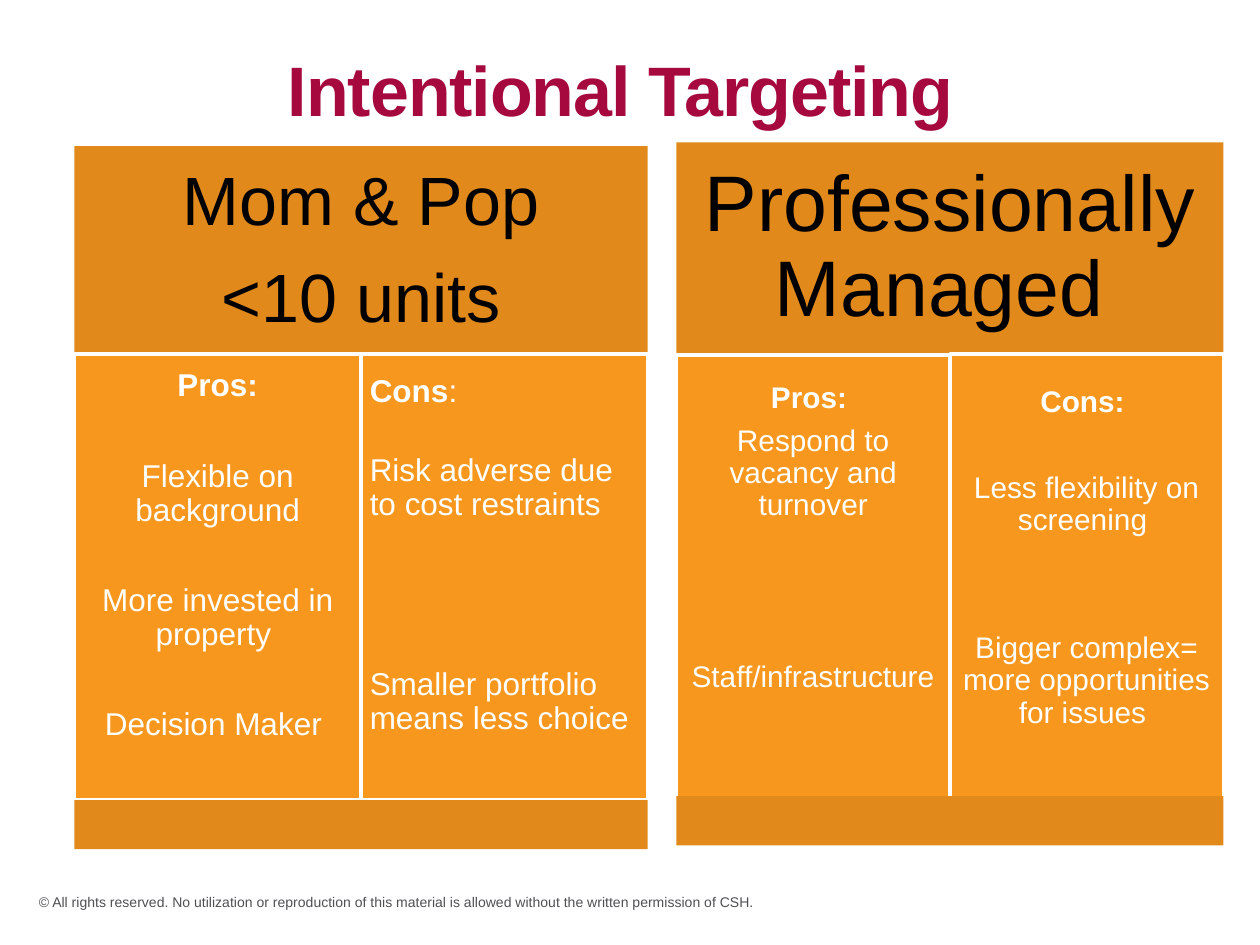
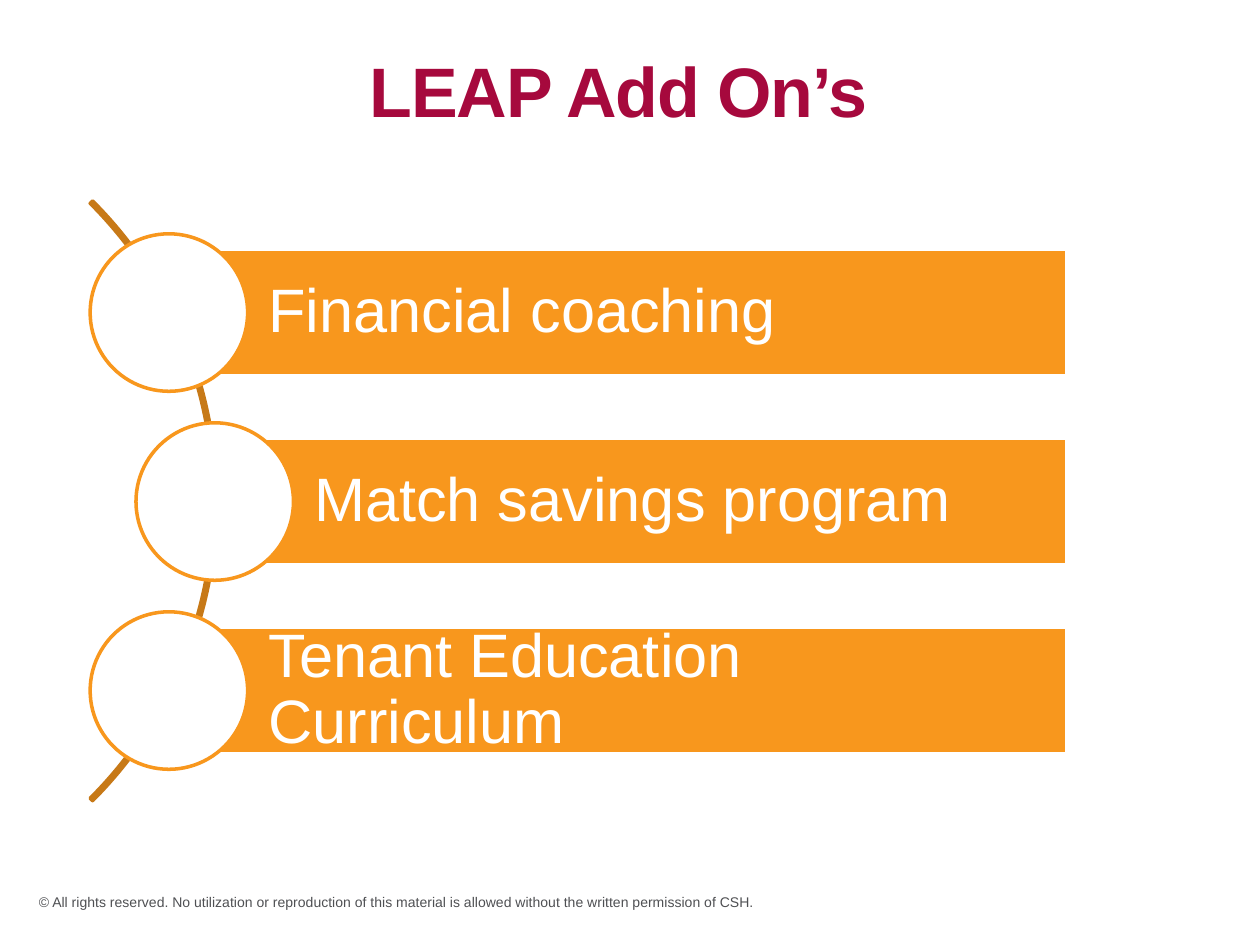
from dataclasses import dataclass

from pptx import Presentation
from pptx.dml.color import RGBColor
from pptx.enum import shapes, text
from pptx.util import Pt


@dataclass(frozen=True)
class Theme:
    font: str = "Arial"
    crimson: str = "A6093D"
    orange: str = "F8971D"
    dark_orange: str = "E1891A"
    arc_brown: str = "C77917"
    white: str = "FFFFFF"
    black: str = "000000"
    grey: str = "4F5053"
    title_size: float = 40
    footer_size: float = 8
    bar_size: float = 35
    line_width: float = 2
    line_spacing: float = 0.9


theme = Theme()
FOOTER = ("© All rights reserved. No utilization or reproduction of this material "
          "is allowed without the written permission of CSH.")
CENTER, LEFT = text.PP_ALIGN.CENTER, text.PP_ALIGN.LEFT
MIDDLE, TOP = text.MSO_ANCHOR.MIDDLE, text.MSO_ANCHOR.TOP


def add_shape(slide, kind, bounds, fill=None, line=None):
    shape = slide.shapes.add_shape(kind, *map(Pt, bounds))
    shape.shadow.inherit = False
    if fill:
        shape.fill.solid()
        shape.fill.fore_color.rgb = RGBColor.from_string(fill)
    else:
        shape.fill.background()
    if line:
        shape.line.color.rgb = RGBColor.from_string(line)
        shape.line.width = Pt(theme.line_width)
    else:
        shape.line.fill.background()
    return shape


def write(shape, lines, size, color, align=LEFT, anchor=MIDDLE,
          margins=(7.2, 3.6, 7.2, 3.6), spacing=theme.line_spacing):
    """Fill a shape with (text, space before) lines; margins run left, top, right, bottom."""
    frame = shape.text_frame
    frame.word_wrap = True
    frame.vertical_anchor = anchor
    (frame.margin_left, frame.margin_top,
     frame.margin_right, frame.margin_bottom) = map(Pt, margins)
    frame.text = "\n".join(line for line, _ in lines)
    for paragraph, (_, space_before) in zip(frame.paragraphs, lines):
        paragraph.alignment = align
        paragraph.line_spacing = spacing
        paragraph.space_before = Pt(space_before)
        for run in paragraph.runs:
            run.font.name = theme.font
            run.font.size = Pt(size)
            run.font.color.rgb = RGBColor.from_string(color)
    return frame


presentation = Presentation()
presentation.slide_width, presentation.slide_height = Pt(720), Pt(540)

# Title and footer on every slide
slides = []
for title, left, top in [("Intentional Targeting ", 73.4, 25.9),
                         ("LEAP Add On’s ", 72, 26.6)]:
    slide = presentation.slides.add_slide(presentation.slide_layouts[6])
    footer = slide.shapes.add_textbox(Pt(15.1), Pt(501.1), Pt(585.4), Pt(28.8))
    write(footer, [(FOOTER, 0)], theme.footer_size, theme.grey, spacing=1.0)
    title_box = slide.shapes.add_textbox(Pt(left), Pt(top), Pt(573.1), Pt(55.4))
    frame = write(title_box, [(title, 0)], theme.title_size, theme.crimson, CENTER)
    title_font = frame.paragraphs[0].runs[0].font
    title_font.bold = True
    title_font._element.set("spc", "-60")
    slides.append(slide)
targeting_slide, add_ons_slide = slides

# Landlord types: header, pros, cons and base band
rectangle = shapes.MSO_SHAPE.RECTANGLE
landlords = [
    dict(left=42.5, width=327.6, header_top=83.5, base_top=457.2, margin=11.5,
         header=[("Mom & Pop", 0), ("<10 units", 13.65)], header_size=39, size=18,
         columns=[
             (202.3, 9, CENTER, [("Pros:", 0), ("Flexible on background", 32),
                                 ("More invested in property ", 32),
                                 ("Decision Maker ", 32)]),
             (202.3, 12, LEFT, [("Cons:", 0),
                                ("Risk adverse due to cost restraints", 26),
                                ("Smaller portfolio means less choice", 83.5)]),
         ]),
    dict(left=386.6, width=312.5, header_top=81.4, base_top=455, margin=13.7,
         header=[("Professionally Managed ", 0)], header_size=45, size=17,
         columns=[
             (203, 16, CENTER, [("Pros: ", 0), ("Respond to vacancy and turnover", 6),
                                ("Staff/infrastructure", 79.5)]),
             (202.3, 19, CENTER, [("Cons: ", 0), ("Less flexibility on screening ", 30.4),
                                  ("Bigger complex= more opportunities for issues ", 55)]),
         ]),
]
for landlord in landlords:
    left, width = landlord["left"], landlord["width"]
    header = add_shape(targeting_slide, rectangle,
                       (left, landlord["header_top"], width, 121), theme.dark_orange)
    write(header, landlord["header"], landlord["header_size"], theme.black, CENTER,
          margins=[landlord["margin"]] * 4)
    for index, (top, inset, align, lines) in enumerate(landlord["columns"]):
        column = add_shape(targeting_slide, rectangle,
                           (left + index * width / 2, top, width / 2, 254.9),
                           theme.orange, theme.white)
        frame = write(column, lines, landlord["size"], theme.white, align, TOP,
                      (5, inset, 5, 5))
        heading = frame.paragraphs[0]
        heading.runs[0].font.bold = True
        if align == LEFT:
            # The colon of a left-aligned heading stays regular
            heading.runs[0].text = "Cons"
            colon = heading.add_run()
            colon.text = ":"
            colon.font.name = theme.font
            colon.font.size = Pt(landlord["size"])
            colon.font.color.rgb = RGBColor.from_string(theme.white)
    add_shape(targeting_slide, rectangle,
              (left, landlord["base_top"], width, 28.1), theme.dark_orange)

# Add-ons: bars with circles along an arc
arc = add_shape(add_ons_slide, shapes.MSO_SHAPE.BLOCK_ARC,
                (-360.7, 43.9, 484.6, 484.6), line=theme.arc_brown)
for index, adjustment in enumerate((189, 27, 0.004)):
    arc.adjustments[index] = adjustment

bar_right, bar_height, bar_pitch, circle_size = 609.8, 72, 108, 90
for index, (add_on, bar_left) in enumerate([("Financial coaching", 96.5),
                                            ("Match savings program", 122.7),
                                            ("Tenant Education Curriculum", 96.5)]):
    bar_top = 142.6 + index * bar_pitch
    bar = add_shape(add_ons_slide, rectangle,
                    (bar_left, bar_top, bar_right - bar_left, bar_height),
                    theme.orange, theme.white)
    write(bar, [(add_on, 0)], theme.bar_size, theme.white, margins=(56.9, 7.2, 7.2, 7.2))
    add_shape(add_ons_slide, shapes.MSO_SHAPE.OVAL,
              (bar_left - circle_size / 2, bar_top - (circle_size - bar_height) / 2,
               circle_size, circle_size), theme.white, theme.orange)

presentation.save("out.pptx")
